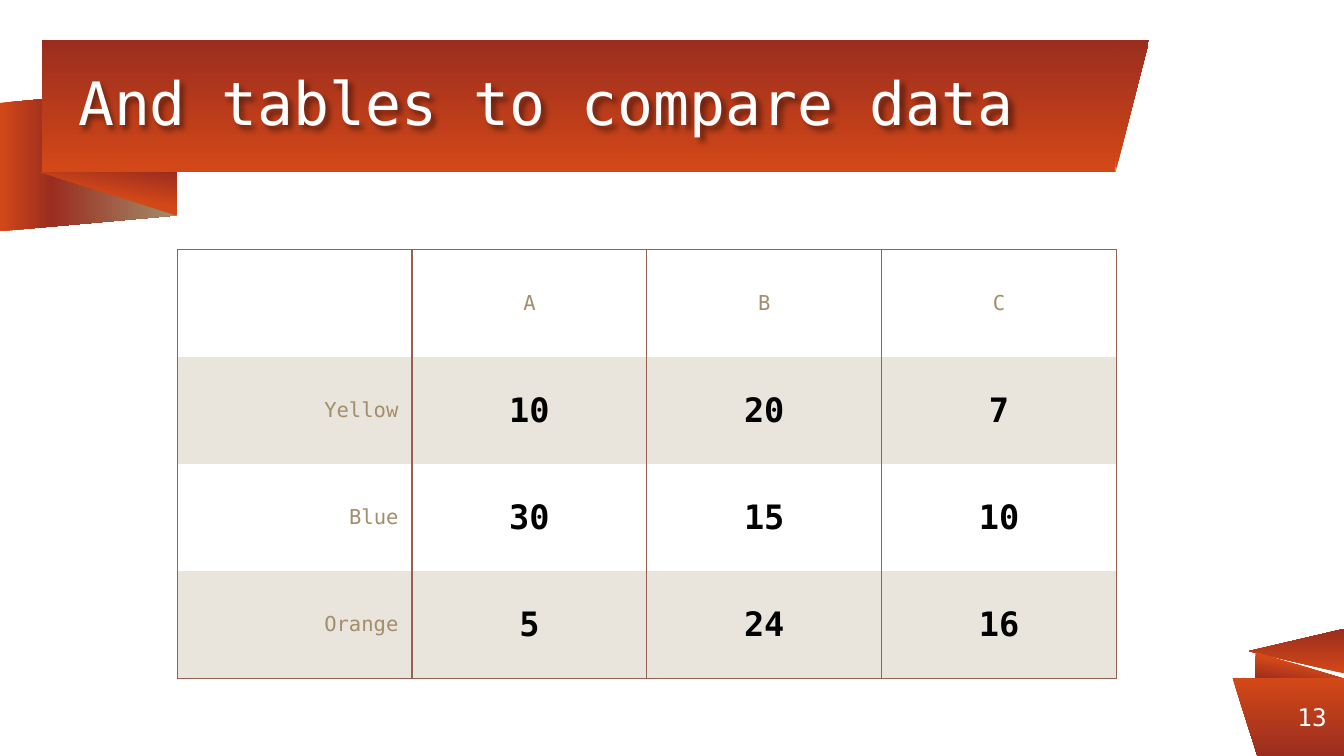
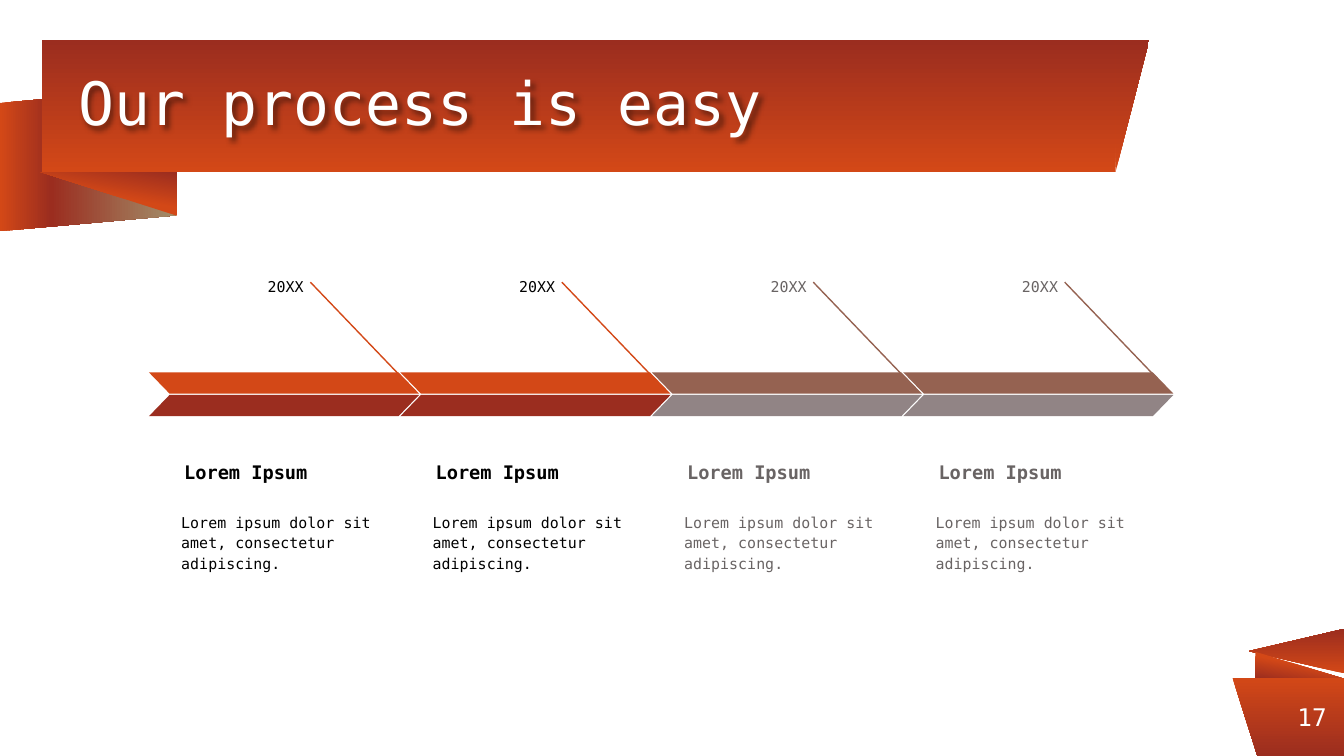
from dataclasses import dataclass
from typing import Optional

from lxml import etree
from pptx import Presentation
from pptx.dml.color import RGBColor
from pptx.enum import shapes, text
from pptx.oxml import parse_xml
from pptx.oxml.ns import nsdecls, qn
from pptx.util import Pt

FONT = "DejaVu Sans Mono"
ORANGE = RGBColor(0xD3, 0x48, 0x17)
RED = RGBColor(0x9B, 0x2D, 0x1F)
TAN = RGBColor(0xA2, 0x8E, 0x6A)
BROWN = RGBColor(0x95, 0x62, 0x51)
MAUVE = RGBColor(0x91, 0x84, 0x85)
GREY = RGBColor(0x69, 0x64, 0x64)
CREAM = RGBColor(0xE9, 0xE5, 0xDC)
WHITE = RGBColor(0xFF, 0xFF, 0xFF)
BLACK = RGBColor(0, 0, 0)

SHAPE = shapes.MSO_SHAPE
ALIGN = text.PP_ALIGN
ANCHOR = text.MSO_ANCHOR
Box = tuple[float, float, float, float]
Stops = tuple[tuple[int, RGBColor], ...]

PLAIN: Stops = ((0, ORANGE), (100, RED))
FOLD: Stops = ((0, ORANGE), (47, ORANGE), (100, RED))
TAIL: Stops = ((0, ORANGE), (29, RED), (100, TAN))


@dataclass(frozen=True)
class Ribbon:
    kind: SHAPE
    box: Box
    stops: Stops
    angle: int
    rotation: int = 0
    flip: bool = False
    adj: Optional[float] = None


@dataclass(frozen=True)
class Style:
    size: float
    color: RGBColor = BLACK
    bold: bool = False
    align: ALIGN = ALIGN.LEFT
    anchor: ANCHOR = ANCHOR.TOP
    inset: float = 0
    spacing: Optional[float] = None
    after: Optional[float] = None


@dataclass(frozen=True)
class Step:
    year: str
    heading: str
    body: str
    ink: RGBColor
    upper: RGBColor
    lower: RGBColor


RIBBONS = (
    Ribbon(SHAPE.PARALLELOGRAM, (8.64, 38.16, 77.04, 94.32), TAIL, 90, 270, True, 0.109),
    Ribbon(SHAPE.RIGHT_TRIANGLE, (21.6, 92.16, 73.2, 23.4), FOLD, 100, 180),
    Ribbon(SHAPE.RECTANGLE, (22.3, 21.6, 575.3, 70.5), PLAIN, 90, 180, True),
    Ribbon(SHAPE.ISOSCELES_TRIANGLE, (597.6, 21.6, 18, 70.5), PLAIN, 90, 180, adj=1),
    Ribbon(SHAPE.ISOSCELES_TRIANGLE, (682.5, 323.3, 23.8, 51.1), PLAIN, 0, 270, adj=0.5),
    Ribbon(SHAPE.RIGHT_TRIANGLE, (672.5, 349.2, 47.5, 14.4), FOLD, 100),
    Ribbon(SHAPE.RECTANGLE, (673.2, 363, 46.8, 42), PLAIN, 270, 180),
    Ribbon(SHAPE.ISOSCELES_TRIANGLE, (660.2, 363, 13.4, 42), PLAIN, 270, 180, True, 1),
)

TITLE = Style(32, WHITE, anchor=ANCHOR.MIDDLE, spacing=0.9)
PAGE_NUMBER = Style(13, WHITE, align=ALIGN.RIGHT, anchor=ANCHOR.MIDDLE)

TABLE_ROWS = (
    ("", "A", "B", "C"),
    ("Yellow", "10", "20", "7"),
    ("Blue", "30", "15", "10"),
    ("Orange", "5", "24", "16"),
)
TABLE_LEFT, TABLE_TOP, COL_WIDTH, ROW_HEIGHT = 95, 133.8, 125.8, 57.4

STEP_TEXT = ("20XX", "Lorem Ipsum", "Lorem ipsum dolor sit amet, consectetur adipiscing.")
DONE = Step(*STEP_TEXT, BLACK, ORANGE, RED)
PENDING = Step(*STEP_TEXT, GREY, BROWN, MAUVE)
STEPS = (DONE, DONE, PENDING, PENDING)
STEP_LEFT, STEP_PITCH = 79.8, 134.7
BAR_WIDTH, BAR_HEIGHT = 144.7, 11.4


def points(*values: float) -> list[Pt]:
    return [Pt(v) for v in values]


def add_filled(s, kind: SHAPE, box: Box, color: RGBColor = ORANGE, flip: bool = False,
               adj: Optional[float] = None):
    sp = s.shapes.add_shape(kind, *points(*box))
    sp.shadow.inherit = False
    sp.line.fill.background()
    sp.fill.solid()
    sp.fill.fore_color.rgb = color
    if adj is not None:
        sp.adjustments[0] = adj
    if flip:
        sp._element.spPr.find(qn("a:xfrm")).set("flipH", "1")
    return sp


def set_gradient(sp, stops: Stops, angle: int) -> None:
    """Fill with the stops (percent, colour); the angle runs clockwise."""
    sp.fill.gradient()
    grad = sp._element.spPr.find(qn("a:gradFill"))
    grad.find(qn("a:lin")).set("ang", str(angle * 60000))
    gs_list = grad.find(qn("a:gsLst"))
    for gs in list(gs_list):
        gs_list.remove(gs)
    for percent, color in stops:
        gs = etree.SubElement(gs_list, qn("a:gs"), pos=str(percent * 1000))
        etree.SubElement(gs, qn("a:srgbClr"), val=str(color))


def add_ribbon(s, ribbon: Ribbon) -> None:
    sp = add_filled(s, ribbon.kind, ribbon.box, flip=ribbon.flip, adj=ribbon.adj)
    sp.rotation = ribbon.rotation
    set_gradient(sp, ribbon.stops, ribbon.angle)


def format_paragraph(p, style: Style) -> None:
    p.alignment = style.align
    if style.spacing is not None:
        p.line_spacing = style.spacing
    if style.after is not None:
        p.space_after = Pt(style.after)
    for r in p.runs:
        r.font.name = FONT
        r.font.size = Pt(style.size)
        r.font.bold = style.bold
        r.font.color.rgb = style.color


def add_text(s, box: Box, words: str, style: Style):
    sp = s.shapes.add_textbox(*points(*box))
    tf = sp.text_frame
    tf.word_wrap = True
    tf.vertical_anchor = style.anchor
    tf.margin_left = tf.margin_right = tf.margin_top = tf.margin_bottom = Pt(style.inset)
    tf.text = words
    format_paragraph(tf.paragraphs[0], style)
    return sp


def add_base_slide(prs, title: str, number: int):
    """Add a slide with the ribbons, its title and its page number."""
    s = prs.slides.add_slide(prs.slide_layouts[6])
    for ribbon in RIBBONS:
        add_ribbon(s, ribbon)
    sp = add_text(s, (41.8, 21.6, 538.5, 70.5), title, TITLE)
    sp._element.spPr.append(parse_xml(
        f'<a:effectLst {nsdecls("a")}><a:outerShdw blurRad="38100" dist="25400" '
        'dir="2700000"><a:srgbClr val="000000"><a:alpha val="43000"/></a:srgbClr>'
        '</a:outerShdw></a:effectLst>'))
    add_text(s, (672.5, 363, 38.2, 42), str(number), PAGE_NUMBER)
    return s


def set_borders(cell, sides: str) -> None:
    """Draw the named sides (of L, R, T, B) and hide the others."""
    tc_pr = cell._tc.get_or_add_tcPr()
    for i, side in enumerate("LRTB"):
        ln = etree.Element(qn(f"a:ln{side}"), w=str(Pt(0.75)))
        if side in sides:
            fill = etree.SubElement(ln, qn("a:solidFill"))
            etree.SubElement(fill, qn("a:srgbClr"), val=str(BROWN))
        else:
            etree.SubElement(ln, qn("a:noFill"))
        tc_pr.insert(i, ln)


def add_data_table(s) -> None:
    n_rows, n_cols = len(TABLE_ROWS), len(TABLE_ROWS[0])
    table = s.shapes.add_table(n_rows, n_cols, *points(
        TABLE_LEFT, TABLE_TOP, COL_WIDTH * n_cols, ROW_HEIGHT * n_rows)).table
    table.first_row = table.horz_banding = False
    for col in table.columns:
        col.width = Pt(COL_WIDTH)
    for i, values in enumerate(TABLE_ROWS):
        table.rows[i].height = Pt(ROW_HEIGHT)
        for j, value in enumerate(values):
            cell = table.cell(i, j)
            cell.vertical_anchor = ANCHOR.MIDDLE
            cell.margin_left = cell.margin_right = Pt(7.2)
            cell.margin_top = cell.margin_bottom = Pt(5)
            if i % 2:
                cell.fill.solid()
                cell.fill.fore_color.rgb = CREAM
            else:
                cell.fill.background()
            set_borders(cell, "LR" + "T" * (i == 0) + "B" * (i == n_rows - 1))
            cell.text_frame.text = value
            align = ALIGN.CENTER if i == 0 or j else ALIGN.RIGHT
            label = i == 0 or j == 0
            style = Style(11, TAN, align=align) if label else Style(18, bold=True, align=align)
            format_paragraph(cell.text_frame.paragraphs[0], style)


def add_step(s, x: float, step: Step) -> None:
    """Draw one arrow of the process, with its texts, from its left edge x."""
    add_text(s, (x + 41, 141.8, 49, 18.7), step.year,
             Style(8, step.ink, align=ALIGN.RIGHT, inset=7.2, spacing=1.15, after=16))
    add_text(s, (x + 11.8, 230.4, 118.8, 35.3), step.heading,
             Style(10, step.ink, bold=True, anchor=ANCHOR.BOTTOM, inset=7.2, spacing=1.15))
    add_text(s, (x + 10.2, 266.4, 121.7, 58.3), step.body,
             Style(8, step.ink, inset=7.2, spacing=1.15, after=16))
    line = s.shapes.add_connector(shapes.MSO_CONNECTOR.STRAIGHT,
                                  *points(x + 86.5, 151.2, x + 142.9, 210))
    line.line.color.rgb = step.upper
    line.line.width = Pt(0.75)
    etree.SubElement(line._element.spPr, qn("a:effectLst"))
    add_filled(s, SHAPE.PARALLELOGRAM, (x, 199.5, BAR_WIDTH, BAR_HEIGHT), step.upper, True, 0.97)
    add_filled(s, SHAPE.PARALLELOGRAM, (x, 211.6, BAR_WIDTH, BAR_HEIGHT), step.lower, adj=0.97)


def main() -> None:
    prs = Presentation()
    prs.slide_width, prs.slide_height = Pt(720), Pt(405)
    add_data_table(add_base_slide(prs, "And tables to compare data", 13))
    s = add_base_slide(prs, "Our process is easy", 17)
    for i, step in enumerate(STEPS):
        add_step(s, STEP_LEFT + i * STEP_PITCH, step)
    prs.save("out.pptx")


if __name__ == "__main__":
    main()
